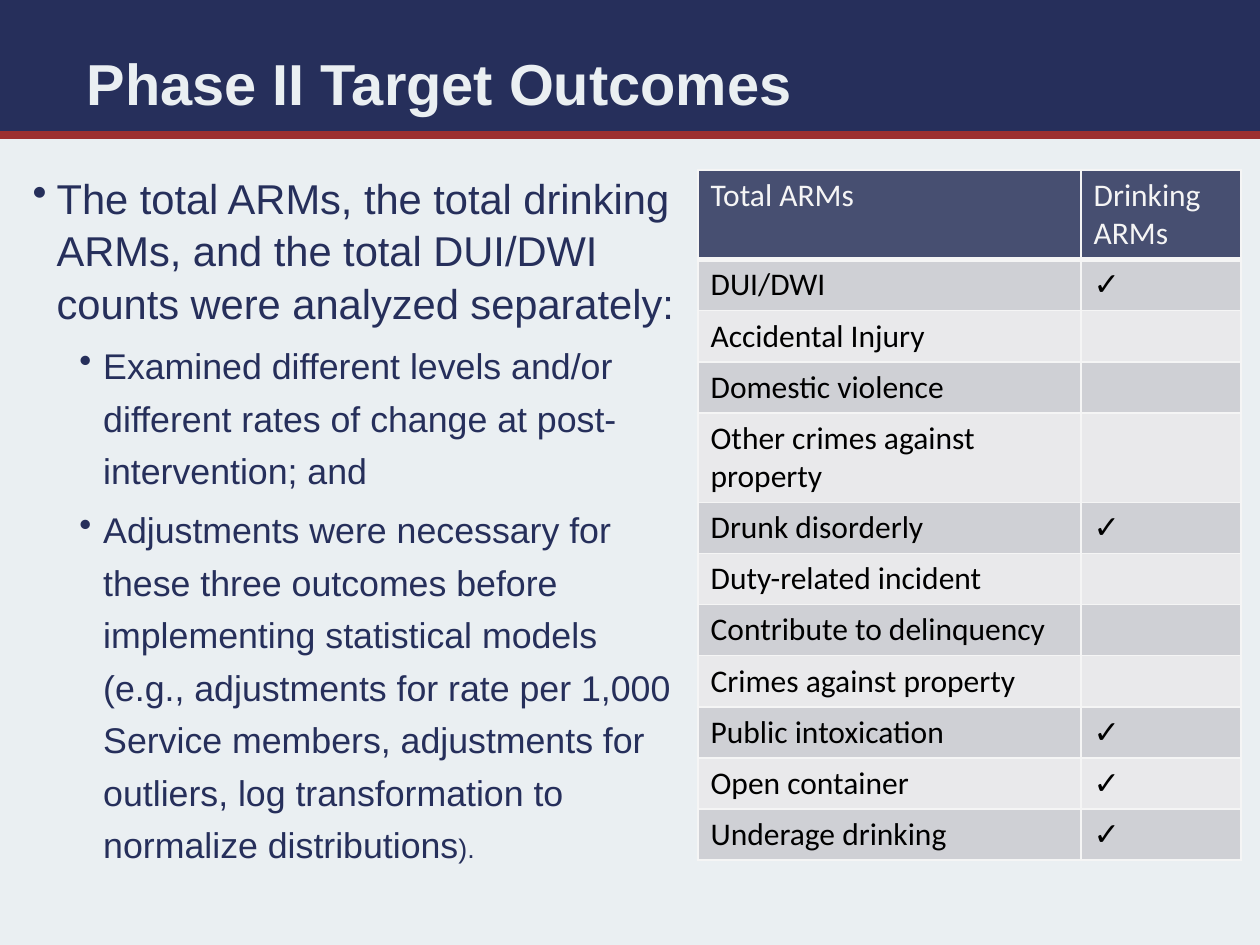
from dataclasses import dataclass

from lxml import etree
from pptx import Presentation
from pptx import util as u
from pptx.dml.color import RGBColor
from pptx.enum import shapes, text
from pptx.oxml import ns


@dataclass(frozen=True)
class Theme:
    paper: str = "EAEFF2"
    navy: str = "262F5B"
    red: str = "9C2F2F"
    header: str = "474F71"
    grid: str = "F5F5F5"
    ink: str = "000000"
    bands: tuple = ("CFD0D5", "E9E9EB")
    heading_font: str = "Arial"
    table_font: str = "Calibri"
    title_size: float = 33
    body_sizes: tuple = (23.8, 20.4)
    closing_size: float = 15.3
    table_size: float = 18


THEME = Theme()
WIDTH, HEIGHT = u.Inches(10), u.Inches(7.5)
BAND_HEIGHT = u.Inches(1.07)
CONTENT_TOP = u.Inches(1.35)
HANG = 0.19
LEVEL_INDENTS = (0.19, 0.56)
LEVEL_SPACING = (7.5, 3.8)
COLUMNS = (3.04, 1.27)
HEADER_HEIGHT, ROW_HEIGHT = 0.32, 0.39
CHECK = "✓"

STATEMENTS = [
    (0, "The total ARMs, the total drinking ARMs, and the total DUI/DWI "
        "counts were analyzed separately:", ""),
    (1, "Examined different levels and/or different rates of change at "
        "post-intervention; and", ""),
    (1, "Adjustments were necessary for these three outcomes before "
        "implementing statistical models (e.g., adjustments for rate per 1,000 "
        "Service members, adjustments for outliers, log transformation to "
        "normalize distributions", ")."),
]

HEADINGS = ("Total ARMs", "Drinking ARMs")
INCIDENTS = [
    ("DUI/DWI", CHECK),
    ("Accidental Injury", ""),
    ("Domestic violence", ""),
    ("Other crimes against property", ""),
    ("Drunk disorderly", CHECK),
    ("Duty-related incident", ""),
    ("Contribute to delinquency", ""),
    ("Crimes against property", ""),
    ("Public intoxication", CHECK),
    ("Open container", CHECK),
    ("Underage drinking", CHECK),
]


def paint(fill, color):
    fill.solid()
    fill.fore_color.rgb = RGBColor.from_string(color)


def set_font(font, name, size, color, bold=False):
    font.name = name
    font.size = u.Pt(size)
    font.bold = bold
    font.color.rgb = RGBColor.from_string(color)


def clear_insets(frame):
    frame.margin_left = frame.margin_top = 0
    frame.margin_right = frame.margin_bottom = 0
    frame.word_wrap = True
    frame.auto_size = text.MSO_AUTO_SIZE.NONE


def add_banner(slide):
    banner = slide.shapes.add_shape(
        shapes.MSO_SHAPE.RECTANGLE, 0, 0, WIDTH, BAND_HEIGHT)
    banner.shadow.inherit = False
    paint(banner.fill, THEME.navy)
    banner.line.fill.background()
    rule = slide.shapes.add_connector(
        shapes.MSO_CONNECTOR.STRAIGHT, 0, BAND_HEIGHT, WIDTH, BAND_HEIGHT)
    rule.line.width = u.Pt(4.75)
    paint(rule.line.fill, THEME.red)
    etree.SubElement(rule._element.spPr, ns.qn("a:effectLst"))


def set_title(slide, wording):
    title = slide.shapes.title
    title.left, title.top = u.Inches(0.69), u.Inches(0.16)
    title.width, title.height = u.Inches(8.62), u.Inches(0.78)
    frame = title.text_frame
    clear_insets(frame)
    frame.vertical_anchor = text.MSO_ANCHOR.BOTTOM
    frame.text = wording
    heading = frame.paragraphs[0]
    heading.alignment = text.PP_ALIGN.LEFT
    heading.line_spacing = 0.9
    set_font(heading.font, THEME.heading_font, THEME.title_size, THEME.paper, True)
    slide.shapes._spTree.append(title._element)


def set_bullet(paragraph, indent):
    properties = paragraph._p.get_or_add_pPr()
    properties.set("marL", str(u.Inches(indent)))
    properties.set("indent", str(-u.Inches(HANG)))
    bullet = etree.Element(ns.qn("a:buChar"), char="•")
    properties.find(ns.qn("a:defRPr")).addprevious(bullet)


def add_statements(slide):
    box = slide.shapes.add_textbox(
        u.Inches(0.26), CONTENT_TOP, u.Inches(5.1), u.Inches(5.99))
    frame = box.text_frame
    clear_insets(frame)
    for index, (level, wording, closing) in enumerate(STATEMENTS):
        statement = frame.add_paragraph() if index else frame.paragraphs[0]
        statement.level = level
        statement.line_spacing = u.Pt(30)
        statement.space_before = u.Pt(LEVEL_SPACING[level])
        set_font(statement.font, THEME.heading_font,
                 THEME.body_sizes[level], THEME.navy)
        set_bullet(statement, LEVEL_INDENTS[level])
        statement.add_run().text = wording
        if closing:
            ending = statement.add_run()
            ending.text = closing
            ending.font.size = u.Pt(THEME.closing_size)


def set_borders(cell, bottom_width):
    properties = cell._tc.get_or_add_tcPr()
    widths = {"lnL": 1, "lnR": 1, "lnT": 1, "lnB": bottom_width}
    for position, (side, width) in enumerate(widths.items()):
        border = etree.Element(ns.qn(f"a:{side}"), w=str(u.Pt(width)))
        fill = etree.SubElement(border, ns.qn("a:solidFill"))
        etree.SubElement(fill, ns.qn("a:srgbClr"), val=THEME.grid)
        properties.insert(position, border)


def fill_cell(cell, wording, background, color, bottom_width):
    cell.text = wording
    set_font(cell.text_frame.paragraphs[0].font,
             THEME.table_font, THEME.table_size, color)
    paint(cell.fill, background)
    set_borders(cell, bottom_width)


def add_incident_table(slide):
    entries = [HEADINGS] + INCIDENTS
    heights = [HEADER_HEIGHT] + [ROW_HEIGHT] * len(INCIDENTS)
    table = slide.shapes.add_table(
        len(entries), len(COLUMNS), u.Inches(5.54), CONTENT_TOP,
        u.Inches(sum(COLUMNS)), u.Inches(sum(heights))).table
    for column, width in zip(table.columns, COLUMNS):
        column.width = u.Inches(width)
    for index, (entry, height) in enumerate(zip(entries, heights)):
        table.rows[index].height = u.Inches(height)
        if index:
            style = THEME.bands[(index - 1) % 2], THEME.ink, 1
        else:
            style = THEME.header, THEME.grid, 3
        for position, wording in enumerate(entry):
            fill_cell(table.cell(index, position), wording, *style)


def main():
    deck = Presentation()
    deck.slide_width, deck.slide_height = WIDTH, HEIGHT
    slide = deck.slides.add_slide(deck.slide_layouts.get_by_name("Title Only"))
    paint(slide.background.fill, THEME.paper)
    add_banner(slide)
    set_title(slide, "Phase II Target Outcomes")
    add_statements(slide)
    add_incident_table(slide)
    deck.save("out.pptx")


if __name__ == "__main__":
    main()
